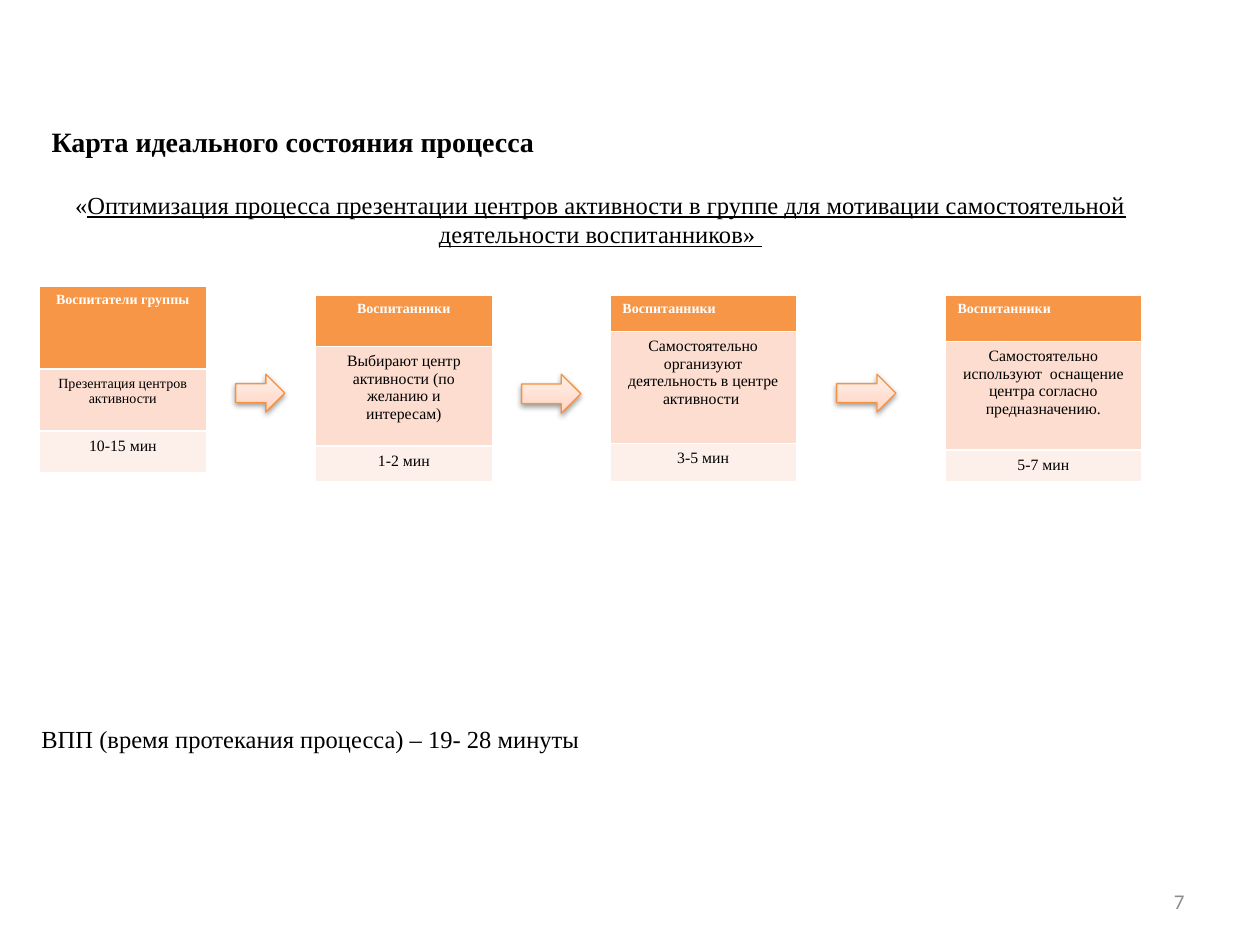
from dataclasses import dataclass

from pptx import Presentation
from pptx.dml.color import RGBColor
from pptx.enum.shapes import MSO_SHAPE
from pptx.enum.text import MSO_ANCHOR, MSO_AUTO_SIZE, PP_ALIGN
from pptx.oxml import parse_xml
from pptx.oxml.ns import nsdecls, qn
from pptx.util import Inches, Pt


@dataclass(frozen=True)
class Theme:
    serif: str = "Times New Roman"
    sans: str = "Calibri"
    ink: str = "000000"
    header_ink: str = "FFFFFF"
    muted: str = "8C8C8C"
    row_fills: tuple = ("F79646", "FCDDCF", "FDEFE9")
    arrow_line: str = "F69240"
    arrow_stops: tuple = ((0, "FFD2BD"), (35, "FFDED0"), (100, "FFF2ED"))
    heading: float = 16
    text: float = 14
    number: float = 12
    cell: float = 9
    small: float = 8


@dataclass(frozen=True)
class Step:
    left: float
    top: float
    width: float
    row_heights: tuple
    texts: tuple
    header_align: PP_ALIGN = PP_ALIGN.LEFT
    action_size: float = 9


@dataclass(frozen=True)
class Arrow:
    left: float
    width: float
    height: float = 0.3


THEME = Theme()
ARROW_TOP = 2.97

STEPS = [
    Step(0.31, 2.27, 1.33, (0.66, 0.49, 0.33),
         ("Воспитатели группы", "Презентация центров активности", "10-15 мин"),
         PP_ALIGN.CENTER, THEME.small),
    Step(2.5, 2.34, 1.41, (0.41, 0.79, 0.28),
         ("Воспитанники", "Выбирают центр активности (по желанию и интересам)", "1-2 мин"),
         PP_ALIGN.CENTER),
    Step(4.84, 2.34, 1.48, (0.29, 0.89, 0.3),
         ("Воспитанники", "Самостоятельно организуют деятельность в центре активности ", "3-5 мин")),
    Step(7.5, 2.34, 1.56, (0.37, 0.86, 0.25),
         ("Воспитанники", "Самостоятельно используют  оснащение центра согласно предназначению.",
          "5-7 мин")),
]
ARROWS = [Arrow(1.87, 0.39), Arrow(4.14, 0.47, 0.31), Arrow(6.64, 0.47)]


def write(para, text, *, size, color=THEME.ink, font=THEME.serif, bold=False,
          underline=False, align=PP_ALIGN.LEFT):
    para.alignment = align
    span = para.add_run()
    span.text = text
    span.font.name = font
    span.font.size = Pt(size)
    span.font.bold = bold
    span.font.underline = underline
    span.font.color.rgb = RGBColor.from_string(color)


def place(shape, left: float, top: float, width: float, height: float):
    shape.left, shape.top = Inches(left), Inches(top)
    shape.width, shape.height = Inches(width), Inches(height)


def add_heading(page):
    title = page.shapes.title
    place(title, 0.31, 0.94, 8.91, 1.11)
    frame = title.text_frame
    frame.word_wrap = True
    frame.auto_size = MSO_AUTO_SIZE.NONE
    frame.vertical_anchor = MSO_ANCHOR.TOP
    write(frame.paragraphs[0], "Карта идеального состояния процесса",
          size=THEME.heading, bold=True)
    subject = frame.add_paragraph()
    subject.space_before = Pt(18)
    write(subject, "«", size=THEME.text, align=PP_ALIGN.CENTER)
    write(subject,
          "Оптимизация процесса презентации центров активности в группе "
          "для мотивации самостоятельной деятельности воспитанников» ",
          size=THEME.text, underline=True, align=PP_ALIGN.CENTER)


def add_note(page, text: str, left: float, top: float, width: float, height: float,
             anchor=MSO_ANCHOR.TOP, **style):
    box = page.shapes.add_textbox(Inches(left), Inches(top), Inches(width), Inches(height))
    box.text_frame.word_wrap = True
    box.text_frame.vertical_anchor = anchor
    write(box.text_frame.paragraphs[0], text, **style)


def add_step(page, step: Step):
    table = page.shapes.add_table(
        len(step.texts), 1, Inches(step.left), Inches(step.top),
        Inches(step.width), Inches(sum(step.row_heights))).table
    styles = (
        dict(size=THEME.small, color=THEME.header_ink, bold=True, align=step.header_align),
        dict(size=step.action_size, align=PP_ALIGN.CENTER),
        dict(size=THEME.cell, align=PP_ALIGN.CENTER),
    )
    rows = zip(step.row_heights, step.texts, THEME.row_fills, styles)
    for index, (height, text, fill, style) in enumerate(rows):
        table.rows[index].height = Inches(height)
        cell = table.cell(index, 0)
        cell.fill.solid()
        cell.fill.fore_color.rgb = RGBColor.from_string(fill)
        write(cell.text_frame.paragraphs[0], text, **style)


def add_arrow(page, arrow: Arrow):
    shape = page.shapes.add_shape(
        MSO_SHAPE.RIGHT_ARROW, Inches(arrow.left), Inches(ARROW_TOP),
        Inches(arrow.width), Inches(arrow.height))
    properties = shape._element.spPr
    stops = "".join(
        f'<a:gs pos="{position * 1000}"><a:srgbClr val="{color}"/></a:gs>'
        for position, color in THEME.arrow_stops)
    properties.append(parse_xml(
        f'<a:gradFill {nsdecls("a")} rotWithShape="1"><a:gsLst>{stops}</a:gsLst>'
        '<a:lin ang="16200000" scaled="1"/></a:gradFill>'))
    shape.line.color.rgb = RGBColor.from_string(THEME.arrow_line)
    shape.line.width = Pt(0.75)
    shape.shadow.inherit = False
    properties.find(qn("a:effectLst")).append(parse_xml(
        f'<a:outerShdw {nsdecls("a")} blurRad="40000" dist="20000" dir="5400000" '
        'rotWithShape="0"><a:srgbClr val="000000"><a:alpha val="38000"/></a:srgbClr>'
        '</a:outerShdw>'))


def main():
    deck = Presentation()
    deck.slide_width, deck.slide_height = Inches(10), Inches(7.5)
    page = deck.slides.add_slide(deck.slide_layouts[5])
    add_heading(page)
    for step in STEPS:
        add_step(page, step)
    for arrow in ARROWS:
        add_arrow(page, arrow)
    add_note(page, "ВПП (время протекания процесса) – 19- 28 минуты",
             0.23, 5.7, 6.48, 0.34, size=THEME.text)
    add_note(page, "7", 7.17, 6.95, 2.33, 0.4, MSO_ANCHOR.MIDDLE, size=THEME.number,
             color=THEME.muted, font=THEME.sans, align=PP_ALIGN.RIGHT)
    deck.save("out.pptx")


if __name__ == "__main__":
    main()
